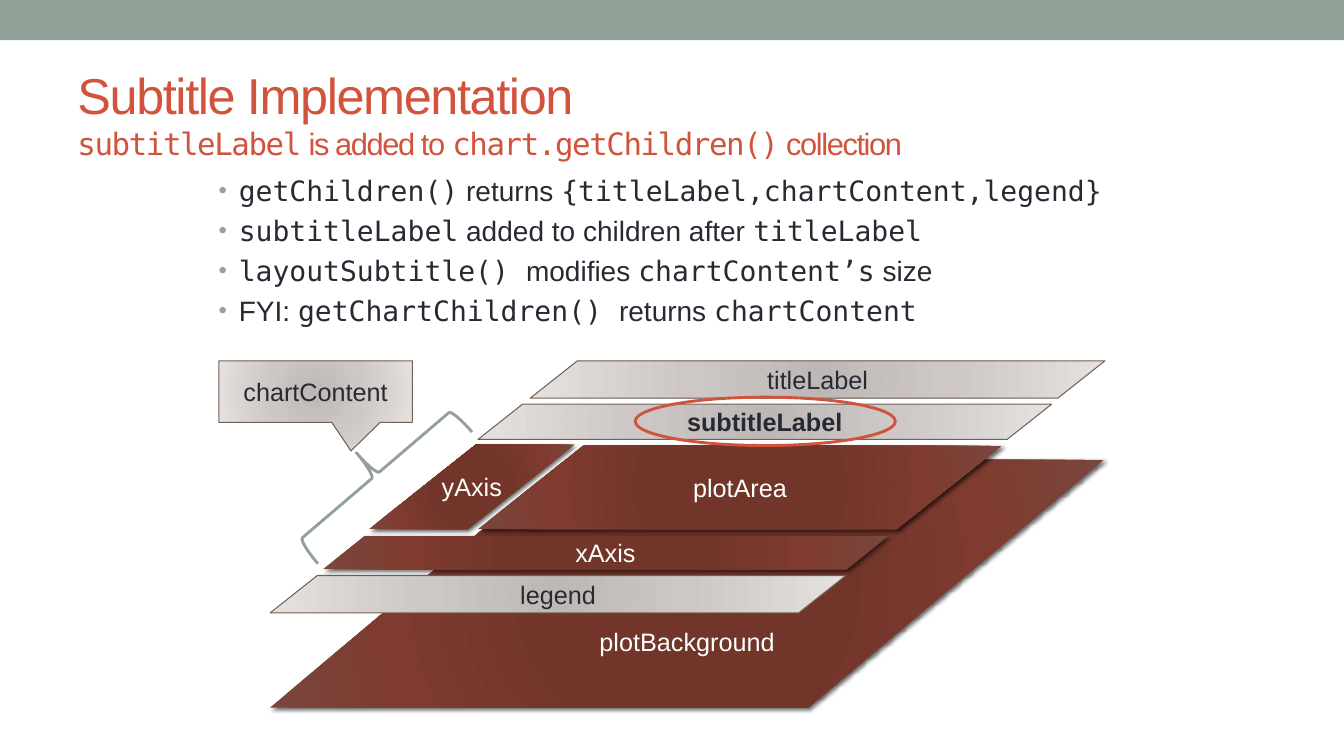
from lxml import etree
from pptx import Presentation
from pptx.dml.color import RGBColor
from pptx.enum.shapes import MSO_SHAPE
from pptx.enum.text import MSO_ANCHOR, PP_ALIGN
from pptx.oxml import parse_xml
from pptx.oxml.ns import nsdecls, qn
from pptx.util import Pt

PX = 9144
SANS = "Arial"
MONO = "DejaVu Sans Mono"
SAGE = RGBColor(0x93, 0xA2, 0x99)
RUST = RGBColor(0xD2, 0x53, 0x3C)
INK = RGBColor(0x29, 0x29, 0x34)
WHITE = RGBColor(0xFF, 0xFF, 0xFF)
TAUPE = RGBColor(0x72, 0x60, 0x56)
GRAY_STOPS = [(0, "BDB8B6"), (45, "CDC7C5"), (100, "E4E1DF")]
BROWN_STOPS = [(0, "743327"), (34, "72352A"), (70, "7F3B2F"), (100, "79463D")]

RECTANGLE = MSO_SHAPE.RECTANGLE
PARALLELOGRAM = MSO_SHAPE.PARALLELOGRAM
LEFT_BRACE = MSO_SHAPE.LEFT_BRACE
CALLOUT = MSO_SHAPE.RECTANGULAR_CALLOUT
OVAL = MSO_SHAPE.OVAL
TOP = MSO_ANCHOR.TOP
MIDDLE = MSO_ANCHOR.MIDDLE
CENTER = PP_ALIGN.CENTER

TITLE = [
    ("Subtitle Implementation", SANS, 36),
    ("\v", SANS, 22),
    ("subtitleLabel", MONO, 22),
    (" is added to ", SANS, 22),
    ("chart.getChildren()", MONO, 22),
    (" collection", SANS, 22),
]
BULLETS = [
    [("getChildren()", MONO, 20), (" returns ", SANS, 20),
     ("{titleLabel,chartContent,legend}", MONO, 20)],
    [("subtitleLabel", MONO, 20), (" added to children after ", SANS, 20),
     ("titleLabel", MONO, 20)],
    [("layoutSubtitle() ", MONO, 20), ("modifies ", SANS, 20),
     ("chartContent’s", MONO, 20), (" size", SANS, 20)],
    [("FYI: ", SANS, 20), ("getChartChildren() ", MONO, 20),
     ("returns ", SANS, 20), ("chartContent", MONO, 20)],
]
LAYERS = [
    ("plotBackground", (268, 456, 827, 246), 1.193, True),
    ("subtitleLabel", (474, 401, 569, 35), 1.263, False),
    ("legend", (268, 571, 571, 37), 1.263, False),
    ("plotArea", (474, 442, 520, 83), 1.263, True),
    ("titleLabel", (526, 358, 570, 37), 1.263, False),
    ("yAxis", (366, 441, 204, 84), 1.263, True),
    ("xAxis", (320, 532, 561, 33), 1.263, True),
]


class SlideBuilder:
    def __init__(self, slide):
        self.slide = slide

    def shape(self, kind, place, adjustments=(), fill=None, line=None, width=2.08):
        shape = self.slide.shapes.add_shape(kind, *(n * PX for n in place))
        shape.shadow.inherit = False
        for index, value in enumerate(adjustments):
            shape.adjustments[index] = value
        if fill is None:
            shape.fill.background()
        else:
            shape.fill.solid()
            shape.fill.fore_color.rgb = fill
        if line is None:
            shape.line.fill.background()
        else:
            shape.line.color.rgb = line
            shape.line.width = Pt(width)
        return shape

    def gradient(self, shape, stops):
        colors = "".join(
            f'<a:gs pos="{position * 1000}"><a:srgbClr val="{color}"/></a:gs>'
            for position, color in stops)
        fill = parse_xml(
            f'<a:gradFill {nsdecls("a")} rotWithShape="1"><a:gsLst>{colors}</a:gsLst>'
            '<a:path path="circle"><a:fillToRect l="100000" t="100000" '
            'r="100000" b="100000"/></a:path></a:gradFill>')
        properties = shape.fill._xPr
        properties.replace(properties.find(qn("a:noFill")), fill)

    def drop_shadow(self, shape):
        effects = shape._element.spPr.find(qn("a:effectLst"))
        effects.append(parse_xml(
            f'<a:outerShdw {nsdecls("a")} blurRad="38100" dist="25400" dir="2700000" '
            'rotWithShape="0"><a:srgbClr val="000000"><a:alpha val="60000"/>'
            '</a:srgbClr></a:outerShdw>'))

    def labelled(self, kind, place, adjustments, text, dark=False, bold=False):
        line = None if dark else TAUPE
        shape = self.shape(kind, place, adjustments, line=line, width=0.75)
        self.gradient(shape, BROWN_STOPS if dark else GRAY_STOPS)
        if dark:
            self.drop_shadow(shape)
        frame = shape.text_frame
        frame.text = text
        frame.vertical_anchor = MIDDLE
        para = frame.paragraphs[0]
        para.alignment = CENTER
        self.style(para.runs[0], SANS, 18, WHITE if dark else INK)
        para.runs[0].font.bold = bold
        return shape

    def style(self, span, font, size, color):
        span.font.name = font
        span.font.size = Pt(size)
        span.font.color.rgb = color

    def text_box(self, place, paragraphs, color, anchor, spacing=0, bullets=False):
        box = self.slide.shapes.add_textbox(*(n * PX for n in place))
        frame = box.text_frame
        frame.word_wrap = True
        frame.vertical_anchor = anchor
        for index, pieces in enumerate(paragraphs):
            para = frame.add_paragraph() if index else frame.paragraphs[0]
            if bullets:
                self.bullet(para)
            if index:
                para.space_before = Pt(4.7)
            for text, font, size in pieces:
                if text == "\v":
                    para.add_line_break()
                    continue
                span = para.add_run()
                span.text = text
                self.style(span, font, size, color)
                if spacing:
                    span.font._element.set("spc", str(spacing))

    def bullet(self, para):
        properties = para._p.get_or_add_pPr()
        properties.set("marL", str(20 * PX))
        properties.set("indent", str(-20 * PX))
        color = etree.SubElement(properties, qn("a:buClr"))
        etree.SubElement(color, qn("a:srgbClr"), val=str(SAGE))
        etree.SubElement(properties, qn("a:buSzPct"), val="85000")
        etree.SubElement(properties, qn("a:buFont"), typeface=SANS)
        etree.SubElement(properties, qn("a:buChar"), char="•")


def main():
    deck = Presentation()
    deck.slide_width = 1333 * PX
    deck.slide_height = 750 * PX
    page = SlideBuilder(deck.slides.add_slide(deck.slide_layouts[6]))

    page.shape(RECTANGLE, (0, 0, 1333, 40), fill=SAGE)
    page.text_box((67, 58, 1200, 108), [TITLE], RUST, MIDDLE, spacing=-100)
    page.text_box((207, 167, 950, 174), BULLETS, INK, TOP, bullets=True)

    for name, place, slant, dark in LAYERS:
        layer = page.labelled(PARALLELOGRAM, place, [slant], name, dark,
                              bold=name == "subtitleLabel")
        if name == "plotBackground":
            layer.text_frame.margin_top = 120 * PX

    brace = page.shape(LEFT_BRACE, (343, 371, 59, 201), line=SAGE)
    brace.rotation = 49.5
    page.labelled(CALLOUT, (217, 358, 192, 61), [0.183, 0.965], "chartContent")
    page.shape(OVAL, (630, 394, 258, 48), line=RUST)

    deck.save("out.pptx")


if __name__ == "__main__":
    main()
